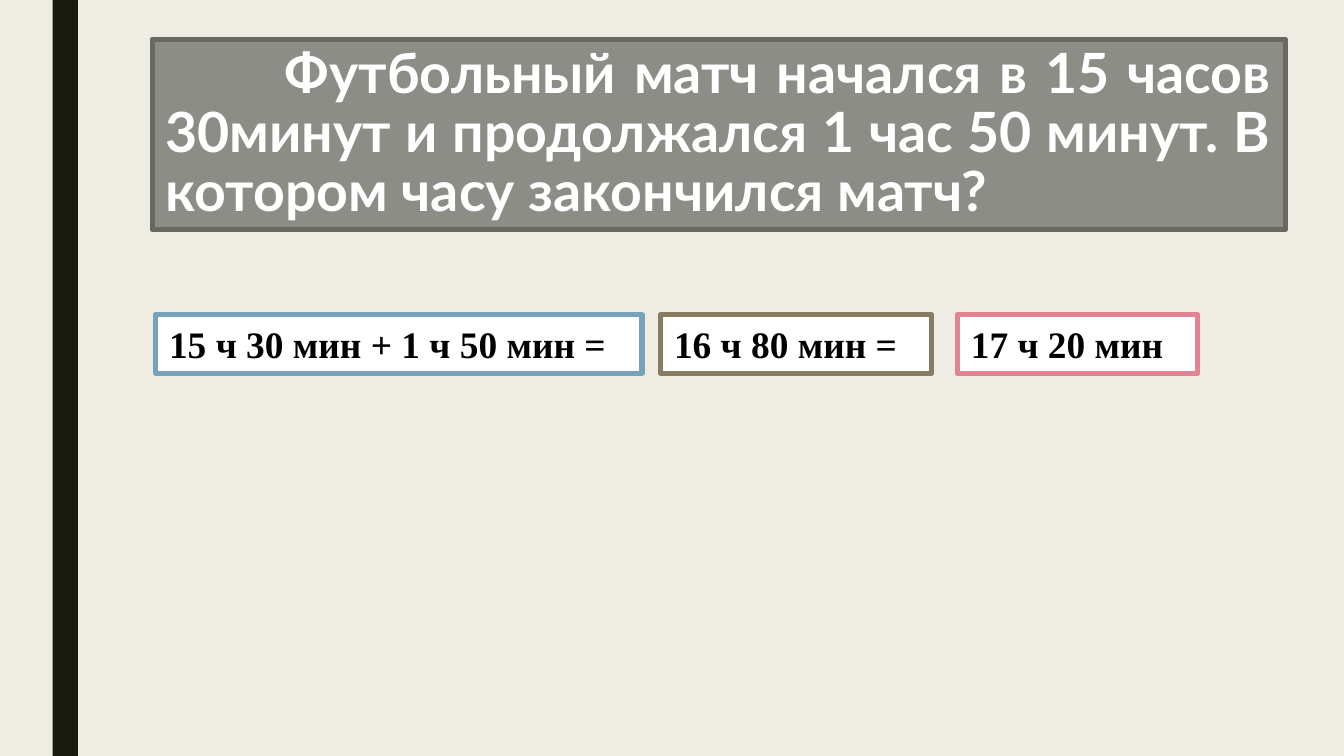
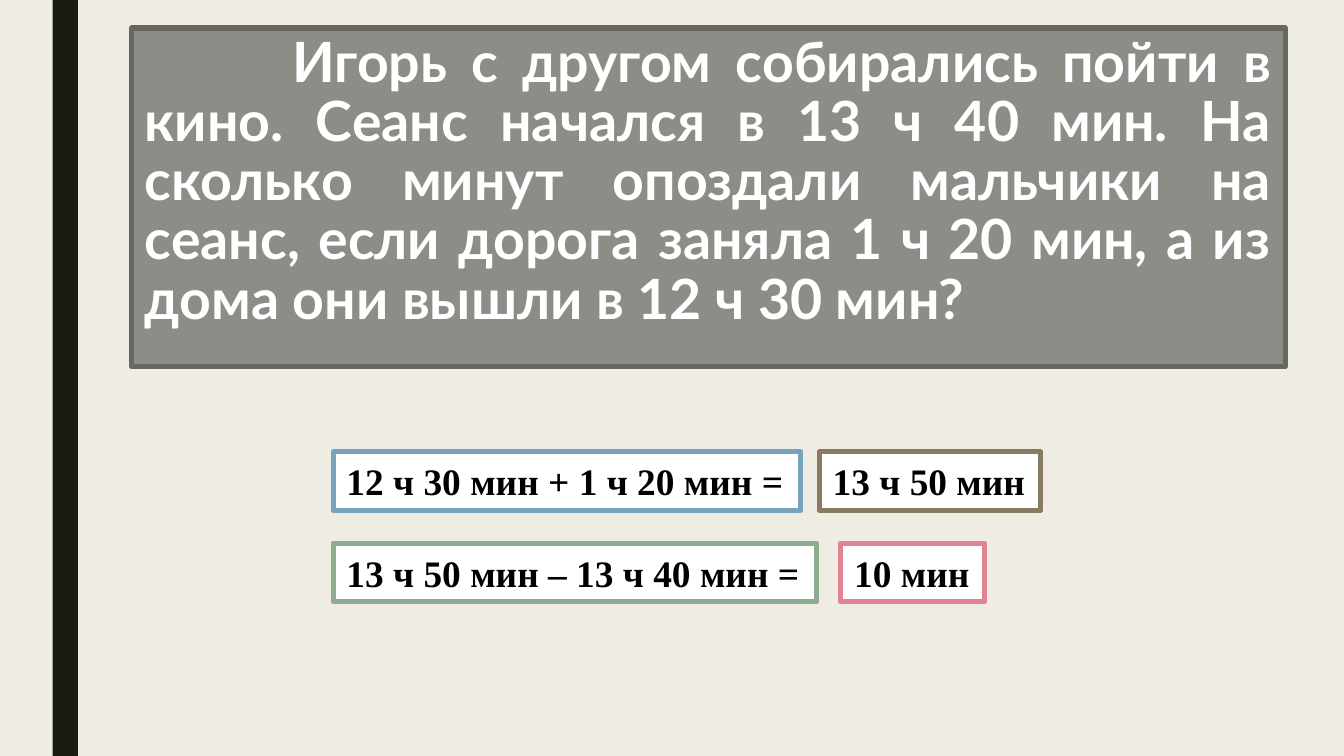
from pptx import Presentation
from pptx.dml.color import RGBColor
from pptx.enum import shapes, text
from pptx.util import Pt

PAPER = RGBColor(0xEF, 0xED, 0xE3)
BAND = RGBColor(0x19, 0x1B, 0x0E)
GREY = RGBColor(0x8C, 0x8D, 0x86)
DARK_GREY = RGBColor(0x68, 0x68, 0x63)
WHITE = RGBColor(0xFF, 0xFF, 0xFF)
BLACK = RGBColor(0x00, 0x00, 0x00)
BLUE = RGBColor(0x77, 0xA2, 0xBB)
BROWN = RGBColor(0x89, 0x7B, 0x61)
GREEN = RGBColor(0x8D, 0xAB, 0x8E)
PINK = RGBColor(0xE2, 0x83, 0x94)

WIDTH, HEIGHT = 720, 405
PROBLEM_RIGHT = 688.5
STEP_HEIGHT = 31.5

# Each step: wording, outline colour, left, width; each row of steps has one top.
PROBLEMS = [
    {
        "question": "Футбольный матч начался в 15 часов 30минут и продолжался "
                    "1 час 50 минут. В котором часу закончился матч?",
        "left": 81.5, "top": 21, "height": 102, "indent": 64,
        "rows": [
            (168.5, [("15 ч 30 мин + 1 ч 50 мин =", BLUE, 83.5, 260.5),
                     ("16 ч 80 мин =", BROWN, 354, 145),
                     ("17 ч 20 мин", PINK, 513, 128.5)]),
        ],
    },
    {
        "question": "Игорь с другом собирались пойти в кино. Сеанс начался в "
                    "13 ч 40 мин. На сколько минут опоздали мальчики на сеанс, "
                    "если дорога заняла 1 ч 20 мин, а из дома они вышли в "
                    "12 ч 30 мин?",
        "left": 70.5, "top": 15, "height": 181.5, "indent": 79,
        "rows": [
            (242, [("12 ч 30 мин + 1 ч 20 мин =", BLUE, 178.5, 250.5),
                   ("13 ч 50 мин", BROWN, 439, 118.5)]),
            (291, [("13 ч 50 мин – 13 ч 40 мин =", GREEN, 178.5, 259),
                   ("10 мин", PINK, 450.5, 77)]),
        ],
    },
]


def add_box(slide, left, top, width, height, fill, outline=None):
    box = slide.shapes.add_shape(shapes.MSO_SHAPE.RECTANGLE,
                                 Pt(left), Pt(top), Pt(width), Pt(height))
    box.shadow.inherit = False
    box.fill.solid()
    box.fill.fore_color.rgb = fill
    if outline is None:
        box.line.fill.background()
    else:
        box.line.color.rgb = outline
        box.line.width = Pt(2.75)
    return box


def write(box, wording, *, font, size, color, align=text.PP_ALIGN.LEFT,
          spacing=1.0, indent=0, right_margin=7.2):
    frame = box.text_frame
    frame.word_wrap = True
    frame.vertical_anchor = text.MSO_ANCHOR.TOP
    frame.margin_right = Pt(right_margin)
    paragraph = frame.paragraphs[0]
    paragraph.alignment = align
    paragraph.line_spacing = spacing
    if indent:
        paragraph._p.get_or_add_pPr().set("indent", str(Pt(indent)))
    run = paragraph.add_run()
    run.text = wording
    run.font.name = font
    run.font.size = Pt(size)
    run.font.bold = True
    run.font.color.rgb = color


def add_problem(deck, problem):
    slide = deck.slides.add_slide(deck.slide_layouts[6])
    slide.background.fill.solid()
    slide.background.fill.fore_color.rgb = PAPER
    add_box(slide, 28.25, 0, 13.5, HEIGHT, BAND)

    question = add_box(slide, problem["left"], problem["top"],
                       PROBLEM_RIGHT - problem["left"], problem["height"],
                       GREY, DARK_GREY)
    write(question, problem["question"], font="Lato", size=29.7, color=WHITE,
          align=text.PP_ALIGN.JUSTIFY, spacing=0.89, indent=problem["indent"])

    for top, steps in problem["rows"]:
        for wording, outline, left, width in steps:
            step = add_box(slide, left, top, width, STEP_HEIGHT, WHITE, outline)
            write(step, wording, font="Times New Roman", size=20, color=BLACK,
                  right_margin=0)


def main():
    deck = Presentation()
    deck.slide_width, deck.slide_height = Pt(WIDTH), Pt(HEIGHT)
    for problem in PROBLEMS:
        add_problem(deck, problem)
    deck.save("out.pptx")


if __name__ == "__main__":
    main()
